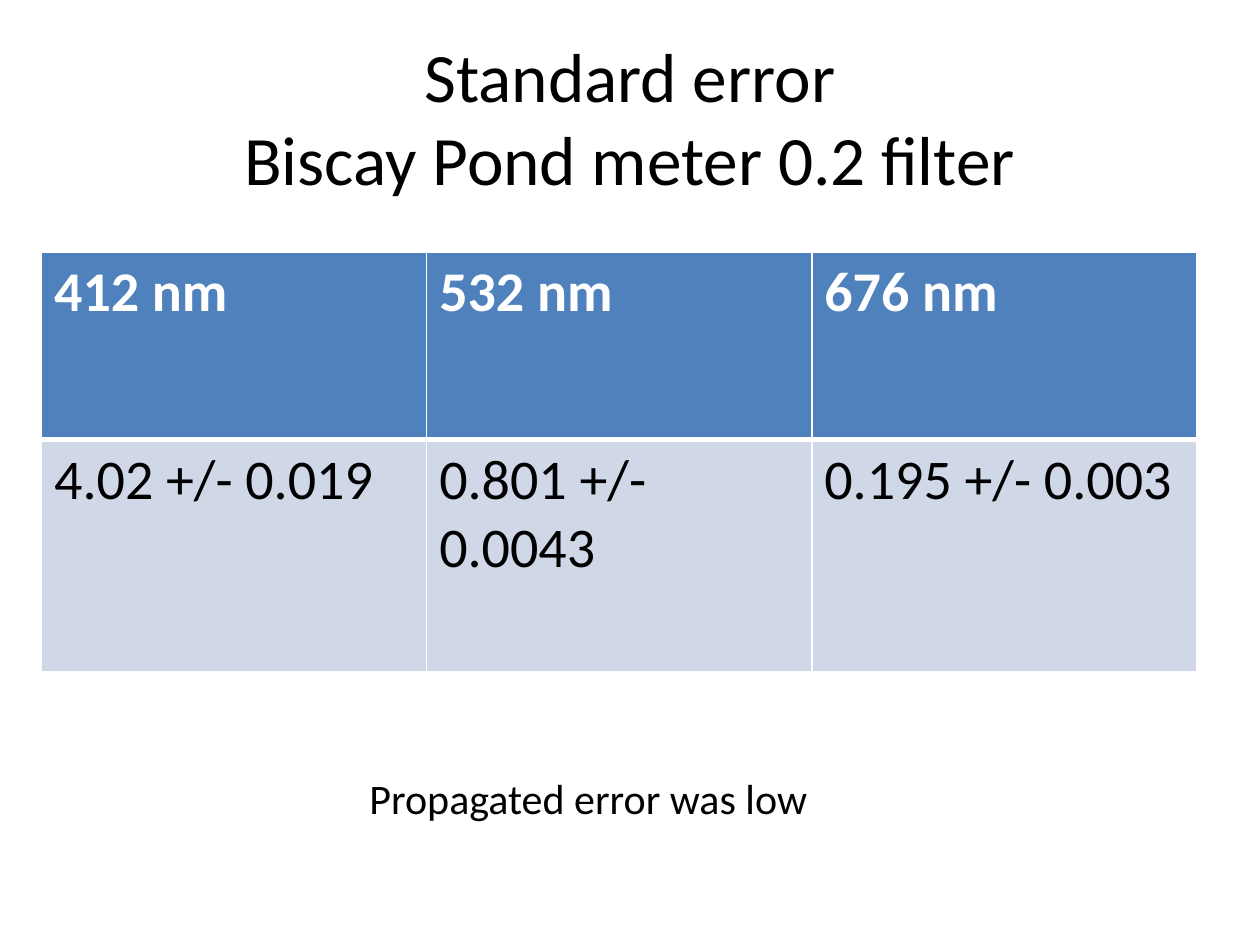
from dataclasses import dataclass

from lxml import etree
from pptx import Presentation
from pptx.dml.color import RGBColor
from pptx.enum.text import MSO_ANCHOR, PP_ALIGN
from pptx.oxml.ns import qn
from pptx.util import Inches, Pt

CENTER = PP_ALIGN.CENTER
TOP, MIDDLE = MSO_ANCHOR.TOP, MSO_ANCHOR.MIDDLE


@dataclass(frozen=True)
class Theme:
    font: str = "Calibri"
    black: RGBColor = RGBColor(0, 0, 0)
    white: RGBColor = RGBColor(255, 255, 255)
    blue: RGBColor = RGBColor(0x4F, 0x81, 0xBD)
    pale: RGBColor = RGBColor(0xD0, 0xD8, 0xE8)
    title: float = 39.6
    cell: float = 32
    note: float = 24
    rule: float = 3


THEME = Theme()
HEADS = ["412 nm", "532 nm", "676 nm"]
VALUES = ["4.02 +/- 0.019", "0.801 +/- 0.0043", "0.195 +/- 0.003"]


def style(para, size, color, bold=False):
    font = para.font
    font.name, font.size, font.bold = THEME.font, Pt(size), bold
    font.color.rgb = color


def add_text(slide, box, text, size, anchor=TOP):
    frame = slide.shapes.add_textbox(*map(Inches, box)).text_frame
    frame.word_wrap = True
    frame.vertical_anchor = anchor
    frame.text = text
    para = frame.paragraphs[0]
    para.alignment = CENTER
    style(para, size, THEME.black)


def rule_below(cell):
    line = etree.Element(qn("a:lnB"), w=str(Pt(THEME.rule)))
    fill = etree.SubElement(line, qn("a:solidFill"))
    etree.SubElement(fill, qn("a:srgbClr"), val=str(THEME.white))
    # Borders come before the fill in a cell's properties
    cell._tc.get_or_add_tcPr().insert(0, line)


def add_errors(slide, box, heights):
    # The default table style supplies the thin white rules
    table = slide.shapes.add_table(
        len(heights), len(HEADS), *map(Inches, box)).table
    for col in table.columns:
        col.width = Inches(box[2] / len(HEADS))
    rows = [(HEADS, THEME.blue, THEME.white, True),
            (VALUES, THEME.pale, THEME.black, False)]
    for row, height, (texts, fill, color, bold) in zip(
            table.rows, heights, rows):
        row.height = Inches(height)
        for cell, text in zip(row.cells, texts):
            cell.text = text
            cell.fill.solid()
            cell.fill.fore_color.rgb = fill
            style(cell.text_frame.paragraphs[0], THEME.cell, color, bold)
    for cell in table.rows[0].cells:
        rule_below(cell)


def main():
    deck = Presentation()
    deck.slide_width, deck.slide_height = Inches(10), Inches(7.5)
    slide = deck.slides.add_slide(deck.slide_layouts[6])

    # Title, with a line break between its two lines
    add_text(slide, (0.5, 0.3, 9, 1.25),
             "Standard error\vBiscay Pond meter 0.2 filter",
             THEME.title, MIDDLE)
    # Error by wavelength
    add_errors(slide, (0.33, 2, 9.17, 3.33), (1.49, 1.84))
    # Closing remark
    add_text(slide, (0.92, 6.08, 7.5, 0.5),
             "Propagated error was low", THEME.note)

    deck.save("out.pptx")


if __name__ == "__main__":
    main()
